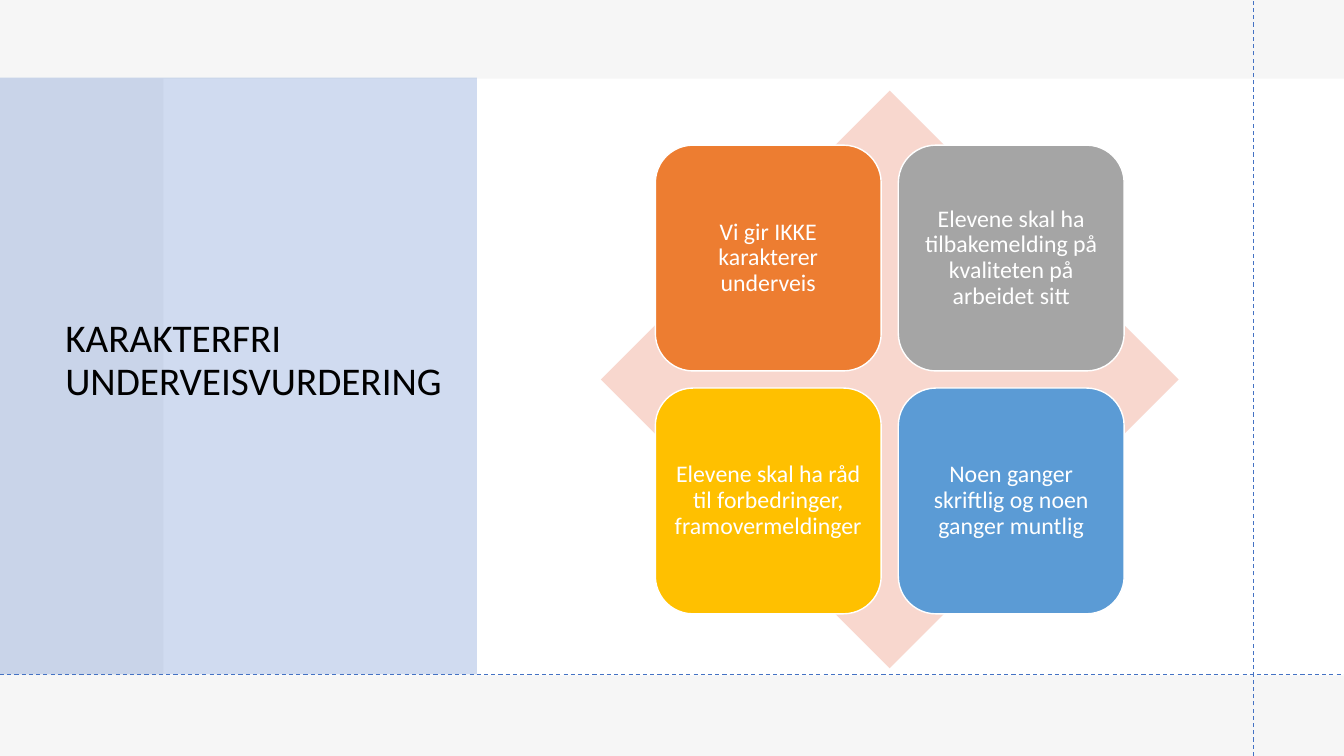
from lxml import etree
from pptx import Presentation
from pptx.dml.color import RGBColor
from pptx.enum.dml import MSO_LINE
from pptx.enum.shapes import MSO_CONNECTOR, MSO_SHAPE
from pptx.enum.text import MSO_ANCHOR, PP_ALIGN
from pptx.oxml.ns import qn
from pptx.util import Inches, Pt

WIDTH, HEIGHT = 13.33, 7.5
TITLE = "KARAKTERFRI UNDERVEISVURDERING"
TILES = [
    ("Vi gir IKKE karakterer underveis", "ED7D31"),
    ("Elevene skal ha tilbakemelding på kvaliteten på arbeidet sitt", "A5A5A5"),
    ("Elevene skal ha råd til forbedringer, framovermeldinger", "FFC000"),
    ("Noen ganger skriftlig og noen ganger muntlig", "5B9BD5"),
]
BACKGROUND, WHITE, BLACK, BLUE, PINK = "F6F6F6", "FFFFFF", "000000", "4472C4", "F8D7CE"
GUIDES = [(12.43, HEIGHT, 12.43, 0), (0, 6.69, WIDTH, 6.69)]
DIAMOND = (5.96, 0.9, 5.73, 5.73)
GRID_LEFT, GRID_TOP, TILE, STEP = 6.5, 1.44, 2.24, 2.41
TITLE_FORMAT = {"size": Pt(28), "name": "Calibri"}
TILE_FORMAT = {"size": Pt(17), "name": "Calibri"}


def rgb(value):
    return RGBColor.from_string(value)


def add_shape(slide, kind, box, color):
    sp = slide.shapes.add_shape(kind, *map(Inches, box))
    sp.shadow.inherit = False
    sp.fill.solid()
    sp.fill.fore_color.rgb = rgb(color)
    sp.line.fill.background()
    return sp


def set_opacity(sp, percent):
    color = sp.fill._xPr.find(qn("a:solidFill"))[0]
    etree.SubElement(color, qn("a:alpha"), val=str(percent * 1000))


def write(sp, text, color, align, margin, font_format):
    """Put one vertically centred paragraph into a shape."""
    tf = sp.text_frame
    tf.word_wrap = True
    tf.vertical_anchor = MSO_ANCHOR.MIDDLE
    for side, inches in zip(("left", "right", "top", "bottom"), margin):
        setattr(tf, f"margin_{side}", Inches(inches))
    p = tf.paragraphs[0]
    p.alignment = align
    p.line_spacing = 0.9
    r = p.add_run()
    r.text = text
    r.font.color.rgb = rgb(color)
    for name, value in font_format.items():
        setattr(r.font, name, value)


def add_guide(slide, ends):
    line = slide.shapes.add_connector(MSO_CONNECTOR.STRAIGHT, *map(Inches, ends))
    line.line.color.rgb = rgb(BLUE)
    line.line.width = Pt(0.75)
    line.line.dash_style = MSO_LINE.DASH
    etree.SubElement(line._element.spPr, qn("a:effectLst"))


def main():
    prs = Presentation()
    prs.slide_width, prs.slide_height = Inches(WIDTH), Inches(HEIGHT)
    slide = prs.slides.add_slide(prs.slide_layouts[6])
    slide.background.fill.solid()
    slide.background.fill.fore_color.rgb = rgb(BACKGROUND)

    add_shape(slide, MSO_SHAPE.RECTANGLE, (1.62, 0.78, WIDTH - 1.62, 5.92), WHITE)
    panel = add_shape(slide, MSO_SHAPE.RECTANGLE, (0, 0.77, 4.73, 5.92), BLUE)
    set_opacity(panel, 25)
    title = slide.shapes.add_textbox(*map(Inches, (0.55, 0.74, 3.95, 5.69)))
    write(title, TITLE, BLACK, PP_ALIGN.LEFT, (0.1, 0.1, 0.05, 0.05), TITLE_FORMAT)
    for ends in GUIDES:
        add_guide(slide, ends)

    add_shape(slide, MSO_SHAPE.DIAMOND, DIAMOND, PINK)
    for i, (text, color) in enumerate(TILES):
        row, col = divmod(i, 2)
        box = (GRID_LEFT + col * STEP, GRID_TOP + row * STEP, TILE, TILE)
        tile = add_shape(slide, MSO_SHAPE.ROUNDED_RECTANGLE, box, color)
        tile.line.color.rgb = rgb(WHITE)
        tile.line.width = Pt(1)
        write(tile, text, WHITE, PP_ALIGN.CENTER, (0.07,) * 4, TILE_FORMAT)

    prs.save("out.pptx")


if __name__ == "__main__":
    main()
